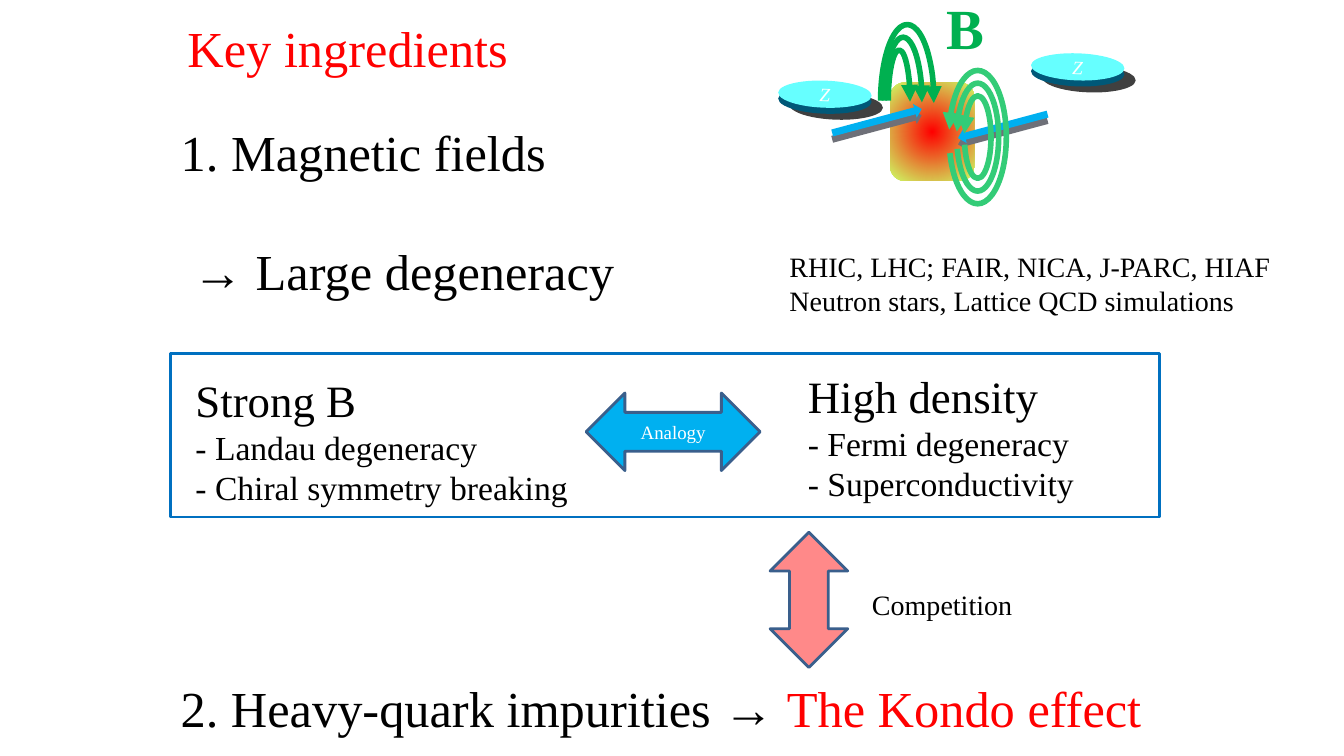
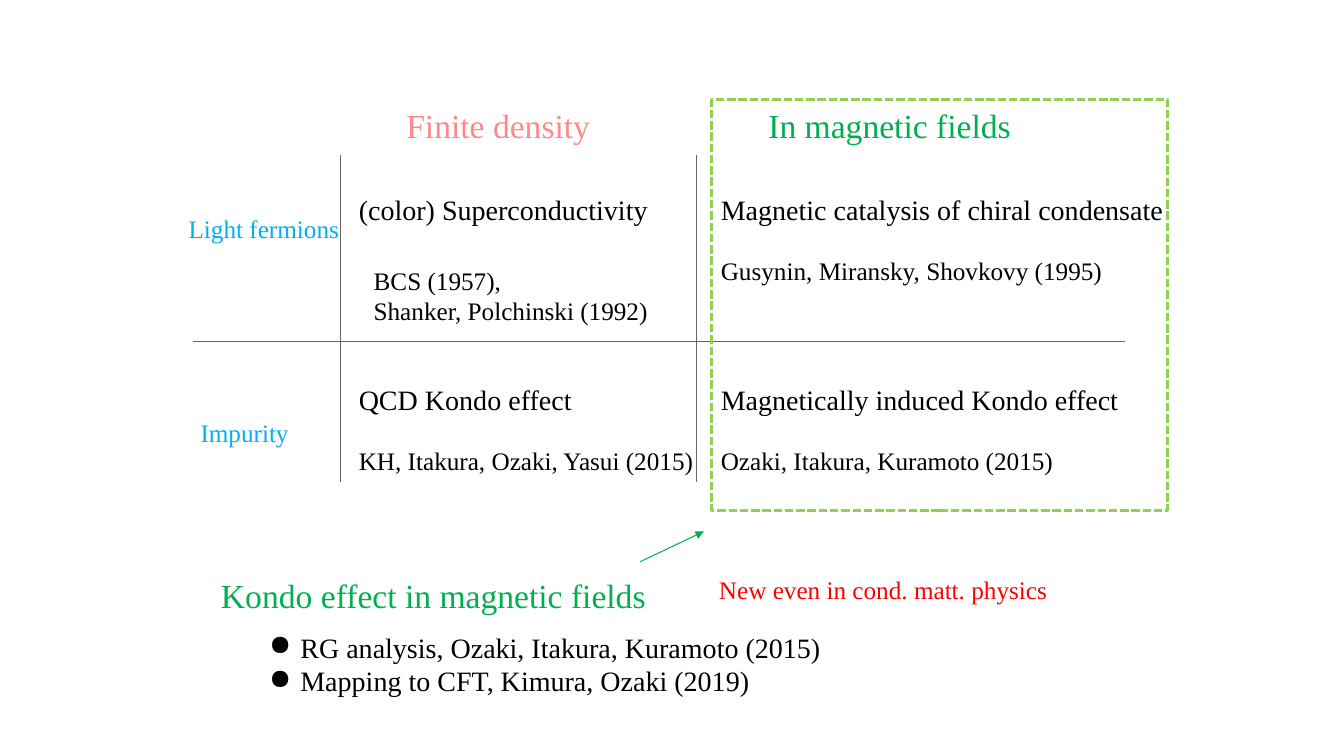
from dataclasses import dataclass

from lxml import etree
from pptx import Presentation
from pptx.dml.color import RGBColor
from pptx.enum.dml import MSO_LINE
from pptx.enum.shapes import MSO_CONNECTOR, MSO_SHAPE
from pptx.enum.text import MSO_ANCHOR, PP_ALIGN
from pptx.oxml import parse_xml
from pptx.oxml.ns import nsdecls, qn
from pptx.util import Inches, Pt

FONT = "Times New Roman"
COLORS = {
    "black": "000000", "white": "FFFFFF", "red": "FF0000", "pink": "FF8989",
    "sky": "00B0F0", "blue": "0070C0", "outline": "3A5F8C", "green": "00B050",
    "loop": "33CC77", "lime": "92D050", "rule": "666666", "disc": "66FFFF",
    "rim": "005878", "shade": "404040", "bar": "6E7078", "glow": "CCFF66",
}
RECT, OVAL, ARC = MSO_SHAPE.RECTANGLE, MSO_SHAPE.OVAL, MSO_SHAPE.ARC
ROUNDED, RIGHT_ARROW = MSO_SHAPE.ROUNDED_RECTANGLE, MSO_SHAPE.RIGHT_ARROW
SIDE_ARROW, UP_DOWN_ARROW = MSO_SHAPE.LEFT_RIGHT_ARROW, MSO_SHAPE.UP_DOWN_ARROW
STRAIGHT, DASH = MSO_CONNECTOR.STRAIGHT, MSO_LINE.SQUARE_DOT
LEFT, CENTER = PP_ALIGN.LEFT, PP_ALIGN.CENTER
TOP, MIDDLE = MSO_ANCHOR.TOP, MSO_ANCHOR.MIDDLE
TITLE_ONLY, BLANK = 5, 6


@dataclass
class Box:
    """A region in inches, divided into 100 columns and 100 rows."""
    left: float
    top: float
    width: float
    height: float

    def region(self, column, row, columns, rows):
        """Return the region that covers the given columns and rows."""
        return Box(self.left + self.width * column / 100,
                   self.top + self.height * row / 100,
                   self.width * columns / 100, self.height * rows / 100)

    def place(self):
        """Return left, top, width and height as lengths."""
        return [Inches(n) for n in (self.left, self.top, self.width, self.height)]


PAGE = Box(0, 0, 13.33, 7.5)


def rgb(name):
    """Return a named colour."""
    return RGBColor.from_string(COLORS[name])


def write(frame, lines, size=20, color="black", bold=False, italic=False,
          align=LEFT, anchor=TOP, gap=0, bullet=None):
    """Fill a text frame with lines, each a string or a list of (text, format)."""
    frame.word_wrap = True
    frame.vertical_anchor = anchor
    for number, line in enumerate(lines):
        para = frame.add_paragraph() if number else frame.paragraphs[0]
        para.alignment = align
        if number and gap:
            para.space_before = Pt(gap)
        if bullet:
            props = para._p.get_or_add_pPr()
            props.set("marL", str(Inches(0.31)))
            props.set("indent", str(-Inches(0.31)))
            etree.SubElement(props, qn("a:buChar")).set("char", bullet)
        for words, style in [(line, {})] if isinstance(line, str) else line:
            span = para.add_run()
            span.text = words
            span.font.name = FONT
            span.font.size = Pt(style.get("size", size))
            span.font.bold = bold
            span.font.italic = italic
            span.font.color.rgb = rgb(style.get("color", color))


def add_text(page, box, *lines, **style):
    """Add a text box."""
    write(page.shapes.add_textbox(*box.place()).text_frame, lines, **style)


def add_shape(page, kind, box, fill=None, line=None, weight=2, turn=0):
    """Add a preset shape without a shadow."""
    shape = page.shapes.add_shape(kind, *box.place())
    shape.shadow.inherit = False
    shape.rotation = turn
    if fill:
        shape.fill.solid()
        shape.fill.fore_color.rgb = rgb(fill)
    else:
        shape.fill.background()
    if line:
        shape.line.color.rgb = rgb(line)
        shape.line.width = Pt(weight)
    else:
        shape.line.fill.background()
    return shape


def add_arrowhead(item, end):
    """Put a triangle on the headEnd or tailEnd of a line."""
    etree.SubElement(item.line._get_or_add_ln(), qn("a:" + end)).set("type", "triangle")


def add_line(page, box, start, end, color):
    """Join two (column, row) points of a box with a thin line."""
    spots = [box.region(*point, 0, 0).place()[:2] for point in (start, end)]
    line = page.shapes.add_connector(STRAIGHT, *spots[0], *spots[1])
    line.line.color.rgb = rgb(color)
    line.line.width = Pt(0.75)
    etree.SubElement(line._element.spPr, qn("a:effectLst"))
    return line


def add_disc(page, box):
    """Draw a thick disc labelled Z with its shadow."""
    for shift_x, shift_y, fill in ((12, 44, "shade"), (0, 22, "rim"), (0, 0, "disc")):
        disc = add_shape(page, OVAL, box.region(shift_x, shift_y, 100, 100), fill, turn=2)
    frame = disc.text_frame
    frame.margin_top = frame.margin_bottom = 0
    write(frame, ["Z"], size=13.5, color="white", italic=True,
          align=CENTER, anchor=MIDDLE)


def add_fireball(page, box):
    """Draw a rounded square that glows from its centre."""
    ball = add_shape(page, ROUNDED, box, "red")
    props = ball._element.spPr
    stops = "".join(f'<a:gs pos="{place}"><a:srgbClr val="{COLORS[name]}"/></a:gs>'
                    for place, name in ((0, "red"), (100000, "glow")))
    props.replace(props.find(qn("a:solidFill")), parse_xml(
        f'<a:gradFill {nsdecls("a")}><a:gsLst>{stops}</a:gsLst><a:path path="circle">'
        '<a:fillToRect l="50000" t="50000" r="50000" b="50000"/></a:path></a:gradFill>'))


def add_loops(page, box, center, size, step, angles, color, end, drift=0):
    """Draw three nested field lines around a (column, row) centre."""
    for ring in range(3):
        width, height = size[0] - step * ring, size[1] - 12 * ring
        column = center[0] - drift * ring
        area = box.region(column - width / 2, center[1] - height / 2, width, height)
        loop = add_shape(page, ARC, area, line=color, weight=4)
        for index, angle in enumerate(angles):
            loop.adjustments[index] = angle * 0.6
        add_arrowhead(loop, end)


def draw_collision(page, box):
    """Draw two ions that collide and the magnetic field around them."""
    add_disc(page, box.region(65.7, 25.2, 23.2, 12.8))
    add_fireball(page, box.region(30.8, 39, 20.8, 46.4))
    for column, row, turn in ((16, 53.8, -15), (47.2, 56.2, 165)):
        for drop, fill in ((3, "bar"), (0, "sky")):
            add_shape(page, RIGHT_ARROW, box.region(column, row + drop, 23, 6.7),
                      fill, turn=turn)
    add_loops(page, box, (35, 47.6), (13.2, 72), 3.9, (180, 5), "green", "tailEnd", 1)
    add_loops(page, box, (52.5, 64.8), (14.2, 63), 3.8, (195, 150), "loop", "headEnd")
    add_text(page, box.region(42.2, -5.7, 16, 37), "B", size=40.5, color="green", bold=True)
    add_disc(page, box.region(3, 38.1, 23.2, 12.8))


def draw_analogy(page, box):
    """Compare strong fields with high density inside a frame."""
    add_shape(page, RECT, box, line="blue")
    arrow = add_shape(page, SIDE_ARROW, box.region(42, 24, 17.6, 47.5), "sky", "outline")
    write(arrow.text_frame, ["Analogy"], size=13.5, color="white",
          align=CENTER, anchor=MIDDLE)
    sides = (
        (1.5, 8.6, 44, "Strong B", "- Landau degeneracy", "- Chiral symmetry breaking"),
        (63.4, 6.2, 36, "High density", "- Fermi degeneracy", "- Superconductivity"),
    )
    for column, row, columns, heading, *points in sides:
        add_text(page, box.region(column, row, columns, 89.5),
                 [(heading, {"size": 32})], *points, size=24)


def draw_competition(page, box):
    """Draw the upright double arrow and its label."""
    add_shape(page, UP_DOWN_ARROW, box.region(0, 0, 30.4, 100), "pink", "outline")
    add_text(page, box.region(36, 37.3, 64, 33), "Competition")


def draw_phenomena(page, box):
    """Lay out the two by two grid of phenomena with its headings and rules."""
    columns, rows = (17.2, 53.8), (21.4, 67.6)
    cells = (
        (("(color) Superconductivity", ""),
         ("Magnetic catalysis of chiral condensate", "Gusynin, Miransky, Shovkovy (1995)")),
        (("QCD Kondo effect", "KH, Itakura, Ozaki, Yasui (2015)"),
         ("Magnetically induced Kondo effect", "Ozaki, Itakura, Kuramoto (2015)")),
    )
    for row, contents in zip(rows, cells):
        for column, (topic, authors) in zip(columns, contents):
            lines = [topic] + ([[(authors, {"size": 18})]] if authors else [])
            add_text(page, box.region(column, row, 47.4, 25.6), *lines, gap=21)
    add_text(page, box.region(18.7, 39.1, 36, 17.4),
             "BCS (1957),", "Shanker, Polchinski (1992)", size=18)
    for column, words, color in ((22, "Finite density", "pink"),
                                 (58.6, "In magnetic fields", "green")):
        add_text(page, box.region(column, 0, 28, 12.3), words, size=24, color=color)
    for column, row, words in ((0, 26.5, "Light fermions"), (1.2, 76.2, "Impurity")):
        add_text(page, box.region(column, row, 18, 10), words, size=18, color="sky")
    for column in (16.4, 52.3):
        add_line(page, box, (column, 13.5), (column, 93.1), "rule")
    add_line(page, box, (1.4, 59), (95.7, 59), "rule")
    frame = add_shape(page, RECT, box.region(53.9, 0, 46.1, 100), line="lime")
    frame.line.dash_style = DASH


def draw_kondo_results(page, box):
    """List the results and point to the framed column."""
    pointer = add_line(page, box, (49.9, 17.4), (57.3, 0), "green")
    add_arrowhead(pointer, "tailEnd")
    add_text(page, box.region(0, 22, 56, 29), "Kondo effect in magnetic fields",
             size=24, color="green")
    add_text(page, box.region(57.9, 22, 42, 23), "New even in cond. matt. physics",
             size=18, color="red")
    add_text(page, box.region(5.6, 54, 71, 45), "RG analysis, Ozaki, Itakura, Kuramoto (2015)",
             "Mapping to CFT, Kimura, Ozaki (2019)", bullet="●")


def build_ingredients(deck):
    """Build the slide on the key ingredients."""
    page = deck.slides.add_slide(deck.slide_layouts[TITLE_ONLY])
    title = page.shapes.title
    title.left, title.top, title.width, title.height = PAGE.region(13.2, 1.6, 30, 9.5).place()
    write(title.text_frame, ["Key ingredients"], size=36, color="red")
    add_text(page, PAGE.region(12.7, 15.3, 32, 9.5), "1. Magnetic fields", size=36)
    add_text(page, PAGE.region(13.6, 31.1, 36, 9.5), "→ Large degeneracy", size=36)
    draw_collision(page, PAGE.region(57, 0, 30, 28))
    add_text(page, PAGE.region(58, 32.4, 42, 10.3), "RHIC, LHC; FAIR, NICA, J-PARC, HIAF",
             "Neutron stars, Lattice QCD simulations")
    draw_analogy(page, PAGE.region(12.7, 46.8, 73.6, 21.6))
    draw_competition(page, PAGE.region(57.3, 70.4, 19, 17.9))
    add_text(page, PAGE.region(12.7, 88.9, 75, 9.5),
             [("2. Heavy-quark impurities → ", {}), ("The Kondo effect", {"color": "red"})],
             size=36)


def build_overview(deck):
    """Build the slide that sorts the phenomena."""
    page = deck.slides.add_slide(deck.slide_layouts[BLANK])
    draw_phenomena(page, PAGE.region(13.3, 13.2, 73.6, 54.3))
    draw_kondo_results(page, PAGE.region(15.7, 70.3, 64, 23))


def main():
    """Build and save the deck."""
    deck = Presentation()
    deck.slide_width, deck.slide_height = PAGE.place()[2:]
    build_ingredients(deck)
    build_overview(deck)
    deck.save("out.pptx")


if __name__ == "__main__":
    main()
